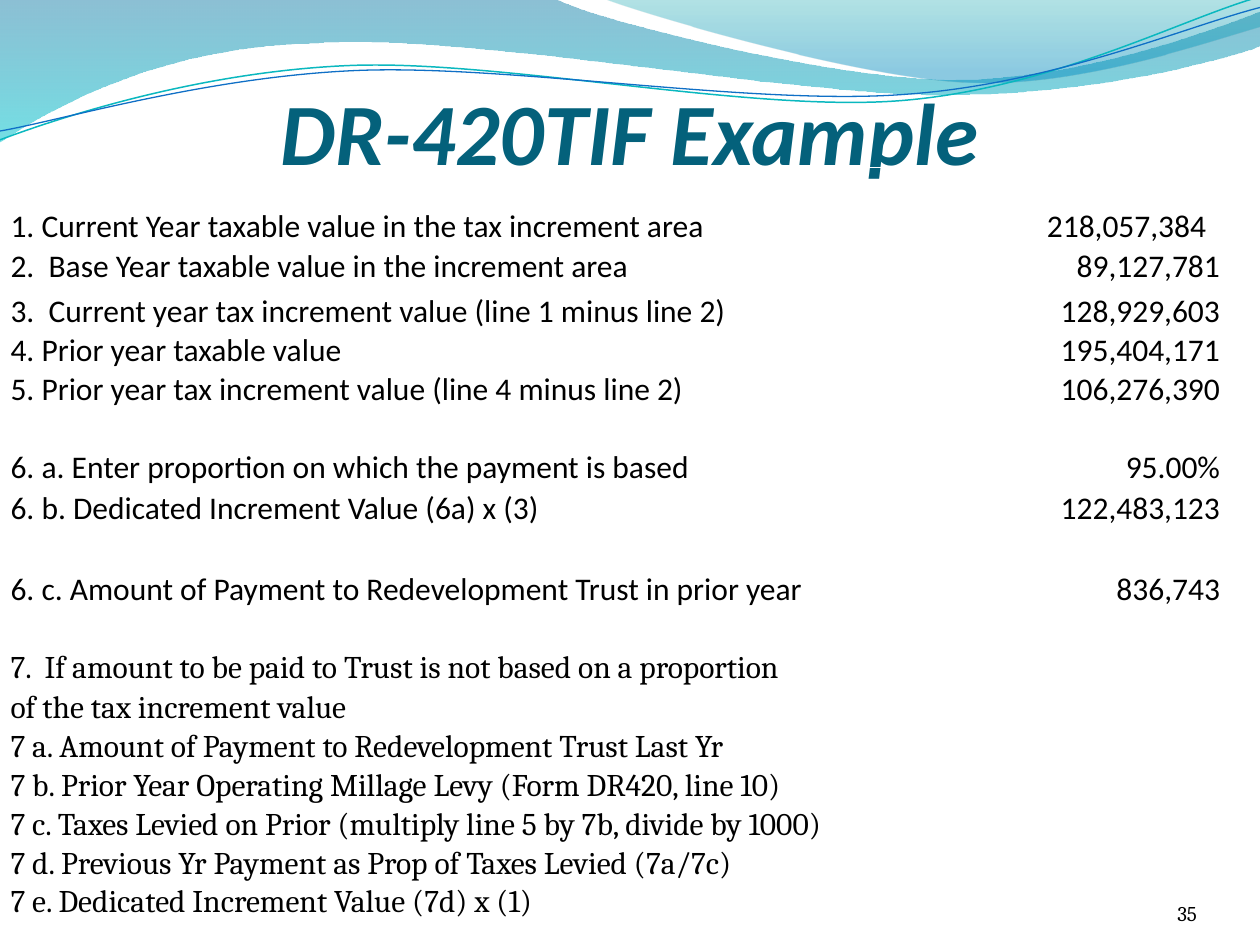
"""Build the DR-420TIF example slide with its wave header and worksheet table."""
import math
from dataclasses import dataclass
from typing import Optional

import pptx
import pptx.dml.color
import pptx.enum.text
import pptx.oxml
import pptx.oxml.ns
import pptx.util
from pptx.util import Inches

COLORS = {
    "title": "04617B", "text": "000000",
    "deep blue": "0074A1", "aqua": "00C6CF",
    "teal": "00A1A9", "sky": "008BBF",
    "teal line": "0AB8BF", "blue line": "0F6FC6",
}
ANCHOR = pptx.enum.text.MSO_ANCHOR
ALIGN = pptx.enum.text.PP_ALIGN
LINE_TILT = 357.3
ROW_HEIGHT = 22.2


@dataclass
class GradientStop:
    position: float
    color: str
    alpha: int


@dataclass
class Wave:
    start: tuple
    segments: list
    stops: tuple = ()
    line_color: Optional[str] = None
    line_width: float = 0
    center: tuple = (0, 0)
    rotation: float = 0


@dataclass
class WorksheetRow:
    label: str = ""
    amount: str = ""
    height: float = ROW_HEIGHT
    font: str = "Calibri"
    amount_inset: float = 0


WAVES = [
    Wave((0, 0), [
        (4.4, -0.01), (4.76, 0.17, 6.64, 0.63, 7.58, 0.63),
        (8.53, 0.63, 9.58, 0.26, 10, 0.09), (10.01, 0.36),
        (9.83, 0.44, 8.7, 0.76, 7.46, 0.75), (6.22, 0.75, 3.82, 0.28, 2.57, 0.34),
        (1.29, 0.36, 0.46, 0.83, -0.01, 1.13),
    ], (GradientStop(0, "deep blue", 45), GradientStop(1, "aqua", 55))),
    Wave((4.79, -0.01), [
        (5.09, 0.11, 6.82, 0.62, 7.69, 0.65), (8.56, 0.69, 9.61, 0.32, 10, 0.21), (10, 0),
    ], (GradientStop(0, "teal", 30), GradientStop(0.8, "sky", 45))),
    Wave((0, 1.11), [
        (0.48, 0.93, 1.58, 0.57, 2.77, 0.52), (3.95, 0.47, 5.93, 0.89, 7.13, 0.8),
        (8.33, 0.71, 9.38, 0.15, 9.98, -0.02),
    ], line_color="teal line", line_width=0.85, center=(4.99, 0.57), rotation=LINE_TILT),
    Wave((0, 1.04), [
        (0.47, 0.96, 1.64, 0.61, 2.83, 0.56), (4.03, 0.51, 5.97, 0.84, 7.17, 0.75),
        (8.36, 0.67, 9.41, 0.21, 10, 0.06),
    ], line_color="blue line", line_width=0.75, center=(5, 0.59), rotation=LINE_TILT),
]

ROWS = [
    WorksheetRow("1. Current Year taxable value in the tax increment area",
                 "218,057,384", 44.6, amount_inset=0.11),
    WorksheetRow("2.  Base Year taxable value in the increment area", "89,127,781", 23),
    WorksheetRow("3.  Current year tax increment value (line 1 minus line 2)", "128,929,603", 26),
    WorksheetRow("4. Prior year taxable value", "195,404,171"),
    WorksheetRow("5. Prior year tax increment value (line 4 minus line 2)", "106,276,390"),
    WorksheetRow(),
    WorksheetRow("6. a. Enter proportion on which the payment is based", "95.00%"),
    WorksheetRow("6. b. Dedicated Increment Value (6a) x (3)", "122,483,123", 23.8),
    WorksheetRow("6. c. Amount of Payment to Redevelopment Trust in prior year", "836,743", 46),
    WorksheetRow(),
    WorksheetRow("7.  If amount to be paid to Trust is not based on a proportion", font="Cambria"),
    WorksheetRow("of the tax increment value", height=23, font="Cambria"),
    WorksheetRow("7 a. Amount of Payment to Redevelopment Trust Last Yr", font="Cambria"),
    WorksheetRow("7 b. Prior Year Operating Millage Levy (Form DR420, line 10)", font="Cambria"),
    WorksheetRow("7 c. Taxes Levied on Prior (multiply line 5 by 7b, divide by 1000)", font="Cambria"),
    WorksheetRow("7 d. Previous Yr Payment as Prop of Taxes Levied (7a/7c)", font="Cambria"),
    WorksheetRow("7 e. Dedicated Increment Value (7d) x (1)", font="Cambria"),
]

NO_MARGINS = {f"margin_{side}": 0 for side in ("left", "top", "right", "bottom")}
CELL_FORMAT = {**NO_MARGINS, "vertical_anchor": ANCHOR.BOTTOM}
FRAME_FORMAT = {**CELL_FORMAT, "word_wrap": True,
                "auto_size": pptx.enum.text.MSO_AUTO_SIZE.NONE}
TITLE_FRAME_FORMAT = {**FRAME_FORMAT, "margin_top": Inches(0.05)}


def apply_format(target, values: dict) -> None:
    """Set each named attribute on the target."""
    for name, value in values.items():
        setattr(target, name, value)


def rgb(color: str) -> pptx.dml.color.RGBColor:
    """Look up a named colour."""
    return pptx.dml.color.RGBColor.from_string(COLORS[color])


def write(frame, text: str, align, color: str = "text", **font_format) -> None:
    """Write one aligned, formatted paragraph."""
    paragraph = frame.paragraphs[0]
    paragraph.alignment = align
    run = paragraph.add_run()
    run.text = text
    apply_format(run.font, font_format)
    run.font.color.rgb = rgb(color)


def level_points(wave: Wave) -> list:
    """List anchor and control points as they lie before the shape is rotated."""
    flat = [*wave.start, *(value for segment in wave.segments for value in segment)]
    cx, cy = wave.center
    angle = math.radians(-wave.rotation)
    cos, sin = math.cos(angle), math.sin(angle)
    return [(Inches(cx + (x - cx) * cos - (y - cy) * sin),
             Inches(cy + (x - cx) * sin + (y - cy) * cos))
            for x, y in zip(flat[::2], flat[1::2])]


def bend(shape, wave: Wave) -> None:
    """Join each curve's three straight steps into one cubic segment."""
    steps = iter(list(shape.element.iter(pptx.oxml.ns.qn("a:lnTo"))))
    for segment in wave.segments:
        step = next(steps)
        if len(segment) == 2:
            continue
        curve = pptx.oxml.parse_xml(f'<a:cubicBezTo {pptx.oxml.ns.nsdecls("a")}/>')
        step.addprevious(curve)
        for part in (step, next(steps), next(steps)):
            curve.append(part[0])
            part.getparent().remove(part)


def draw_wave(slide, wave: Wave) -> None:
    """Draw a gradient wave or an open wave line."""
    first, *others = level_points(wave)
    builder = slide.shapes.build_freeform(*first)
    builder.add_line_segments(others, close=bool(wave.stops))
    shape = builder.convert_to_shape()
    bend(shape, wave)
    shape.rotation = wave.rotation
    shape.shadow.inherit = False
    if not wave.stops:
        shape.fill.background()
        shape.line.color.rgb = rgb(wave.line_color)
        shape.line.width = pptx.util.Pt(wave.line_width)
        return
    shape.line.fill.background()
    shape.fill.gradient()
    shape.fill.gradient_angle = 270
    for target, stop in zip(shape.fill.gradient_stops, wave.stops):
        target.position = stop.position
        target.color.rgb = rgb(stop.color)
    gradient = shape.element.spPr.find(pptx.oxml.ns.qn("a:gradFill"))
    for color, stop in zip(gradient.iter(pptx.oxml.ns.qn("a:srgbClr")), wave.stops):
        color.append(pptx.oxml.parse_xml(
            f'<a:alpha {pptx.oxml.ns.nsdecls("a")} val="{stop.alpha * 1000}"/>'))


def draw_worksheet(slide) -> None:
    """Add the worksheet table of labels and amounts."""
    height = pptx.util.Pt(sum(row.height for row in ROWS))
    table = slide.shapes.add_table(len(ROWS), 2, pptx.util.Pt(6), Inches(1.33),
                                   Inches(9.6), height).table
    apply_format(table, {"first_row": False, "horz_banding": False})
    for column, width in zip(table.columns, (7.76, 1.84)):
        column.width = Inches(width)
    for table_row, row in zip(table.rows, ROWS):
        table_row.height = pptx.util.Pt(row.height)
        label, amount = table_row.cells
        for cell, text, align in ((label, row.label, ALIGN.LEFT), (amount, row.amount, ALIGN.RIGHT)):
            apply_format(cell, CELL_FORMAT)
            cell.fill.background()
            if text:
                write(cell.text_frame, text, align, name=row.font, size=pptx.util.Pt(18))
        amount.margin_right = Inches(row.amount_inset)


def main() -> None:
    """Build and save the slide."""
    deck = pptx.Presentation()
    apply_format(deck, {"slide_width": Inches(10), "slide_height": Inches(7.5)})
    slide = deck.slides.add_slide(deck.slide_layouts[5])
    for wave in WAVES:
        draw_wave(slide, wave)
    title = slide.shapes.title
    title.element.getparent().append(title.element)
    apply_format(title, {"left": Inches(0.5), "top": Inches(0.5),
                         "width": Inches(9), "height": Inches(0.95)})
    apply_format(title.text_frame, TITLE_FRAME_FORMAT)
    write(title.text_frame, "DR-420TIF Example", ALIGN.CENTER, "title",
          name="Calibri", size=pptx.util.Pt(50), bold=True, italic=True)
    draw_worksheet(slide)
    page_number = slide.shapes.add_textbox(Inches(8.67), Inches(6.95), Inches(0.83), Inches(0.4))
    apply_format(page_number.text_frame, FRAME_FORMAT)
    write(page_number.text_frame, "35", ALIGN.RIGHT, name="Cambria", size=pptx.util.Pt(12))
    deck.save("out.pptx")


if __name__ == "__main__":
    main()
